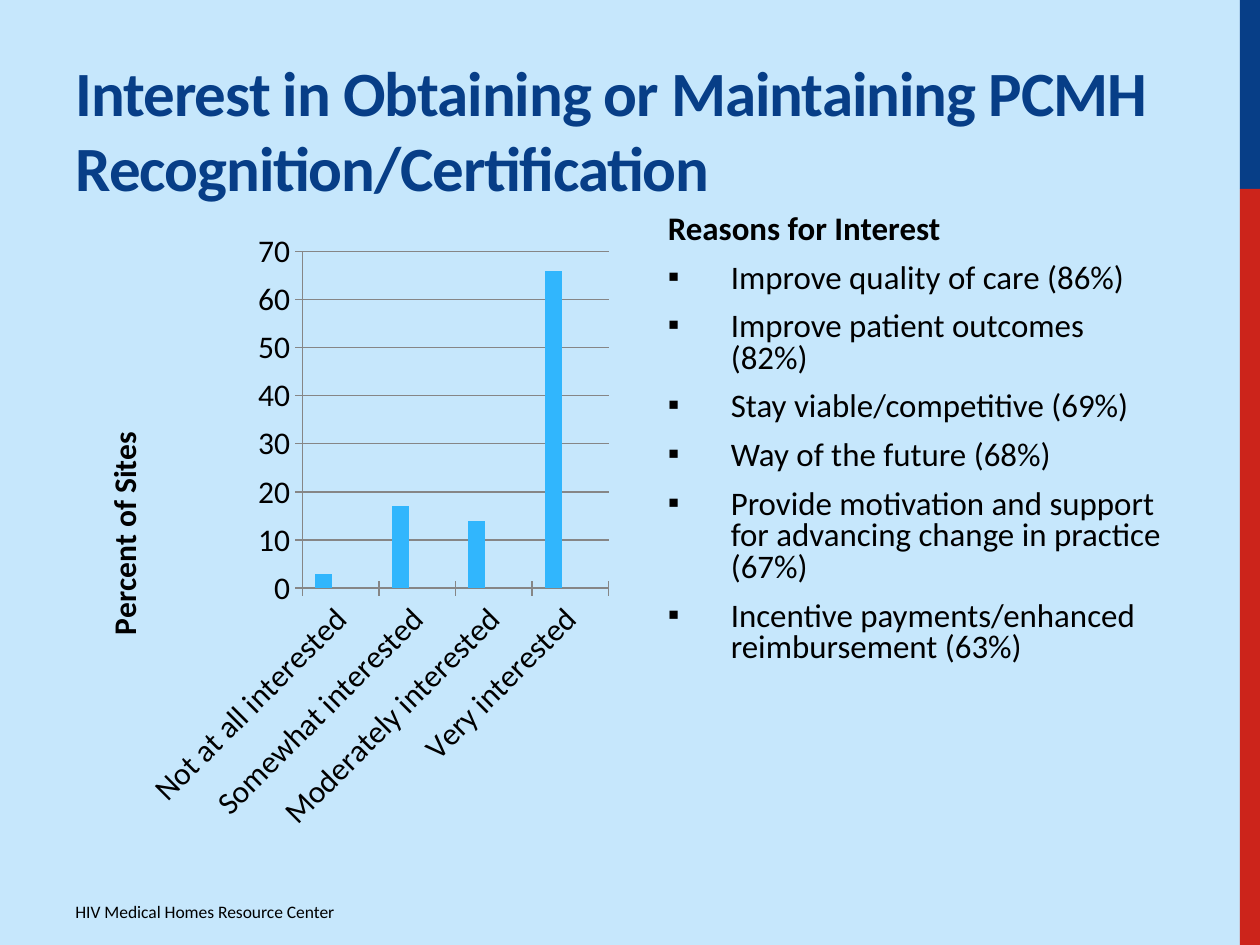
from dataclasses import dataclass

from pptx import Presentation
from pptx.chart.data import CategoryChartData
from pptx.dml.color import RGBColor
from pptx.enum.chart import XL_CHART_TYPE as ChartType, XL_TICK_MARK as Tick
from pptx.enum.shapes import MSO_SHAPE as Shape
from pptx.enum.text import MSO_ANCHOR as Anchor, MSO_AUTO_SIZE as AutoSize, PP_ALIGN as Align
from pptx.oxml import parse_xml
from pptx.oxml.ns import nsdecls, qn
from pptx.util import Inches, Pt


@dataclass(frozen=True)
class Theme:
    font: str = "Calibri"
    sky: str = "C6E7FC"
    navy: str = "073E87"
    red: str = "CC241B"
    black: str = "000000"
    grid: str = "868686"
    series: tuple = ("31B6FD", "4584D3", "5BD078")
    title_size: float = 36
    body_size: float = 18.8
    chart_size: float = 18
    footer_size: float = 10


class SlideBuilder:
    """Holds the theme and slide; areas are (left, top, width, height) shares."""

    def __init__(self, deck, theme):
        self.deck, self.theme = deck, theme
        self.slide = deck.slides.add_slide(deck.slide_layouts[1])
        background = self.slide.background.fill
        background.solid()
        background.fore_color.rgb = RGBColor.from_string(theme.sky)

    def area(self, shares):
        width, height = self.deck.slide_width, self.deck.slide_height
        return [round(share * side) for share, side in zip(shares, (width, height) * 2)]

    def place(self, holder, shares):
        holder.left, holder.top, holder.width, holder.height = self.area(shares)
        frame = holder.text_frame
        frame.word_wrap = True
        frame.auto_size = AutoSize.NONE
        return frame

    def style(self, font, size, color, bold=False):
        font.name, font.size, font.bold = self.theme.font, Pt(size), bold
        font.color.rgb = RGBColor.from_string(color)

    def band(self, shares, color):
        band = self.slide.shapes.add_shape(Shape.RECTANGLE, *self.area(shares))
        band.shadow.inherit = False
        band.fill.solid()
        band.fill.fore_color.rgb = RGBColor.from_string(color)
        band.line.fill.background()

    def title(self, shares, wording):
        frame = self.place(self.slide.shapes.title, shares)
        frame.text = wording
        frame.vertical_anchor = Anchor.BOTTOM
        heading = frame.paragraphs[0]
        heading.alignment = Align.LEFT
        self.style(heading.font, self.theme.title_size, self.theme.navy, True)
        heading._p.pPr.find(qn("a:defRPr")).set("spc", "-60")

    def reasons(self, shares, heading, items):
        frame = self.place(self.slide.placeholders[1], shares)
        frame.text = "\n".join([heading, *items])
        for index, line in enumerate(frame.paragraphs):
            is_item = index > 0
            line.line_spacing = 0.8
            line.space_before = Pt(3.75 if is_item else 0)
            line.space_after = Pt(6)
            indent = Inches(0.5) if is_item else 0
            props = line._p.get_or_add_pPr()
            props.set("marL", str(indent))
            props.set("indent", str(-indent))
            bullet = 'buChar char="▪"' if is_item else "buNone"
            props.append(parse_xml(f"<a:{bullet} {nsdecls('a')}/>"))
            self.style(line.font, self.theme.body_size, self.theme.black, not is_item)

    def footer(self, shares, wording):
        frame = self.place(self.slide.shapes.add_textbox(*self.area(shares)), shares)
        frame.text = wording
        self.style(frame.paragraphs[0].font, self.theme.footer_size, self.theme.black)

    def layout(self, target, inner=False, **shares):
        """Give a plot area or axis title a fixed place within the chart."""
        old = target.find(qn("c:layout"))
        if old is not None:
            target.remove(old)
        goal = '<c:layoutTarget val="inner"/>' if inner else ""
        modes = "".join(f'<c:{key}Mode val="edge"/>' for key in "xy")
        values = "".join(f'<c:{key} val="{value}"/>' for key, value in shares.items())
        node = parse_xml(f"<c:layout {nsdecls('c')}><c:manualLayout>{goal}{modes}{values}"
                         "</c:manualLayout></c:layout>")
        target.insert(0 if inner else 1, node)

    def column_chart(self, shares, axis_title, categories, series):
        data = CategoryChartData()
        data.categories = categories
        for name, values in series.items():
            data.add_series(name, values)
        chart = self.slide.shapes.add_chart(
            ChartType.COLUMN_CLUSTERED, *self.area(shares), data).chart
        chart.has_legend = chart.has_title = False
        self.style(chart.font, self.theme.chart_size, self.theme.black)

        # Columns
        plot = chart.plots[0]
        plot.gap_width, plot.overlap, plot.vary_by_categories = 150, 0, False
        for column, color in zip(plot.series, self.theme.series):
            column.format.fill.solid()
            column.format.fill.fore_color.rgb = RGBColor.from_string(color)

        # Axes
        sites, interest = chart.value_axis, chart.category_axis
        sites.minimum_scale, sites.maximum_scale, sites.major_unit = 0, 70, 10
        sites.has_major_gridlines = True
        for lines in (sites, interest, sites.major_gridlines):
            lines.format.line.color.rgb = RGBColor.from_string(self.theme.grid)
        for axis in (sites, interest):
            axis.major_tick_mark = Tick.CROSS
            self.style(axis.tick_labels.font, self.theme.chart_size, self.theme.black)
        interest._element.find(f"{qn('c:txPr')}/{qn('a:bodyPr')}").set("rot", "-2700000")

        # Axis title and plot position
        caption = sites.axis_title.text_frame
        caption.text = axis_title
        self.style(caption.paragraphs[0].font, self.theme.chart_size, self.theme.black, True)
        caption._txBody.bodyPr.set("rot", "-5400000")
        caption._txBody.bodyPr.set("vert", "horz")
        self.layout(sites.axis_title._element, x=0.06, y=0.33)
        self.layout(chart._chartSpace.chart.plotArea, inner=True,
                    x=0.43, y=0.05, w=0.55, h=0.54)


def main():
    deck = Presentation()
    deck.slide_width, deck.slide_height = Inches(10), Inches(7.5)
    theme = Theme()
    page = SlideBuilder(deck, theme)

    # Side bands
    edge, split = 0.984, 0.2
    page.band((edge, 0, 1 - edge, split), theme.navy)
    page.band((edge, split, 1 - edge, 1 - split), theme.red)

    # Title and footer
    margin = 0.05
    page.title((margin, 0.023, 0.887, 0.2),
               "Interest in Obtaining or Maintaining PCMH Recognition/Certification")
    page.footer((margin, 0.947, 0.375, 0.041), "HIV Medical Homes Resource Center")

    # Level of interest
    levels = ["Not at all interested", "Somewhat interested",
              "Moderately interested", "Very interested"]
    blank = [None] * len(levels)
    page.column_chart((margin, 0.233, 0.442, 0.66), "Percent of Sites", levels,
                      {"Series 1": [3, 17, 14, 66], "Series 2": blank, "Series 3": blank})

    # Reasons
    page.reasons((0.52, 0.221, 0.417, 0.637), "Reasons for Interest", [
        "Improve quality of care (86%)",
        "Improve patient outcomes (82%)",
        "Stay viable/competitive (69%)",
        "Way of the future (68%)",
        "Provide motivation and support for advancing change in practice (67%)",
        "Incentive payments/enhanced reimbursement (63%)",
    ])
    deck.save("out.pptx")


if __name__ == "__main__":
    main()
